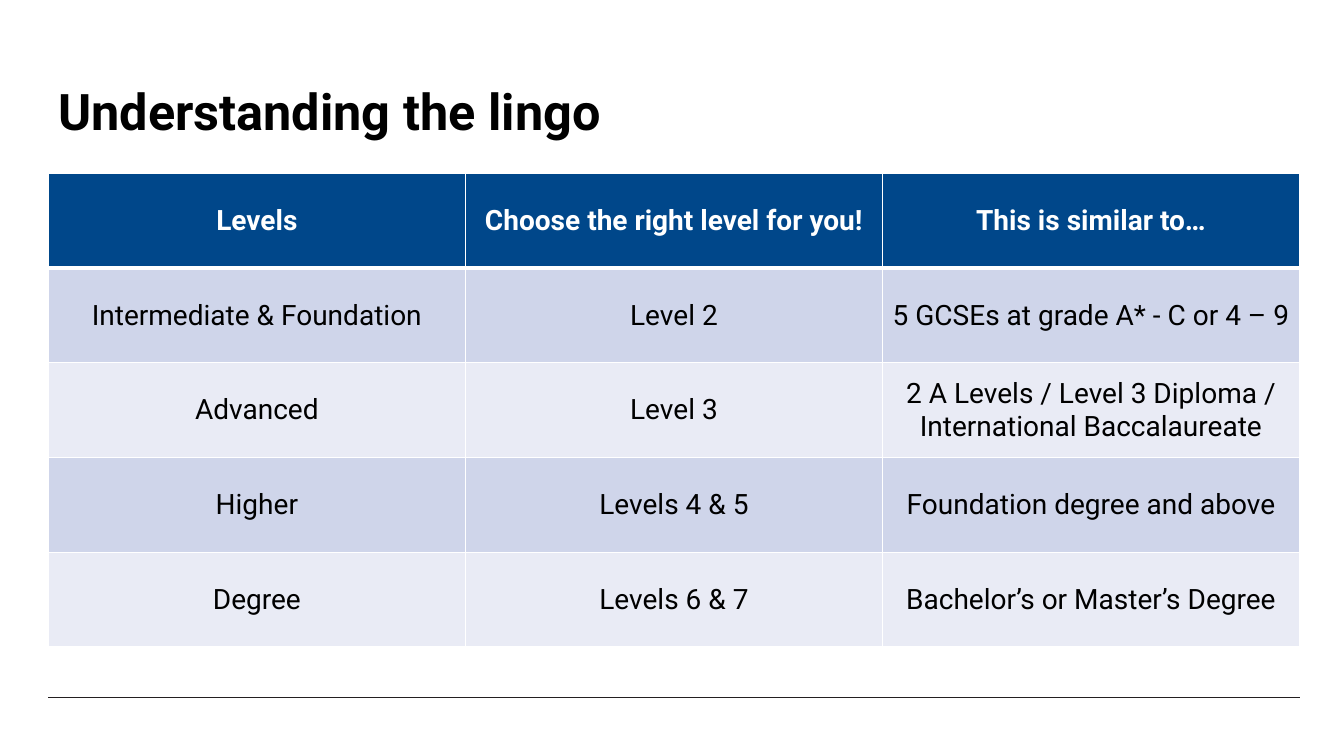
"""Build the slide that explains apprenticeship levels in a table."""
from lxml import etree
from pptx import Presentation
from pptx.dml.color import RGBColor
from pptx.enum.shapes import MSO_CONNECTOR as Connector
from pptx.enum.text import MSO_ANCHOR as Anchor, MSO_AUTO_SIZE as AutoSize, PP_ALIGN as Align
from pptx.oxml import parse_xml
from pptx.oxml.ns import nsdecls, qn
from pptx.util import Inches, Pt


def color(hex_string):
    return RGBColor.from_string(hex_string)


def format_text(paragraph, text_color, **values):
    for name, value in {"name": "Roboto", **values}.items():
        setattr(paragraph.font, name, value)
    paragraph.font.color.rgb = color(text_color)


LEFT, WIDTH = Inches(0.48), Inches(12.41)
TABLE_TOP, ROW_HEIGHT = Inches(1.72), Inches(0.94)
RULE_TOP = Inches(6.92)
HEADER_FILL, BAND_FILLS = "00478A", ("E9EBF5", "CFD5EA")
ROWS = [
    ("Levels", "Choose the right level for you!", "This is similar to…"),
    ("Intermediate & Foundation", "Level 2", "5 GCSEs at grade A* - C or 4 – 9"),
    ("Advanced", "Level 3", "2 A Levels / Level 3 Diploma / International Baccalaureate"),
    ("Higher", "Levels 4 & 5", "Foundation degree and above"),
    ("Degree", "Levels 6 & 7", "Bachelor’s or Master’s Degree"),
]

presentation = Presentation()
presentation.slide_width, presentation.slide_height = Inches(13.33), Inches(7.5)
slide = presentation.slides.add_slide(presentation.slide_layouts[5])

rule = slide.shapes.add_connector(Connector.STRAIGHT, LEFT, RULE_TOP, LEFT + WIDTH, RULE_TOP)
rule.line.color.rgb = color("231F20")
rule.line.width = Pt(0.5)
etree.SubElement(rule._element.spPr, qn("a:effectLst"))

title = slide.shapes.title
title.left, title.top, title.width, title.height = LEFT, Inches(0.4), WIDTH, Inches(1.05)
title.text_frame.text = "Understanding the lingo"
title.text_frame.auto_size = AutoSize.NONE
title.text_frame.vertical_anchor = Anchor.BOTTOM
heading = title.text_frame.paragraphs[0]
heading.alignment = Align.LEFT
heading.line_spacing = 0.9
format_text(heading, "000000", size=Pt(36), bold=True)

table = slide.shapes.add_table(
    len(ROWS), len(ROWS[0]), LEFT, TABLE_TOP, WIDTH, ROW_HEIGHT * len(ROWS)
).table
for row_index, texts in enumerate(ROWS):
    is_header = row_index == 0
    table.rows[row_index].height = ROW_HEIGHT
    for column_index, text in enumerate(texts):
        cell = table.cell(row_index, column_index)
        cell.text = text
        cell.vertical_anchor = Anchor.MIDDLE
        cell.fill.solid()
        cell.fill.fore_color.rgb = color(HEADER_FILL if is_header else BAND_FILLS[row_index % 2])
        paragraph = cell.text_frame.paragraphs[0]
        paragraph.alignment = Align.CENTER
        format_text(paragraph, "FFFFFF" if is_header else "000000", size=Pt(20), bold=is_header)
        border_widths = {
            "lnL": 1,
            "lnR": 1,
            "lnT": 3 if row_index == 1 else 1,
            "lnB": 3 if is_header else 1,
        }
        for position, (side, points) in enumerate(border_widths.items()):
            border = parse_xml(
                f'<a:{side} {nsdecls("a")} w="{Pt(points)}"><a:solidFill>'
                f'<a:srgbClr val="FFFFFF"/></a:solidFill></a:{side}>'
            )
            cell._tc.get_or_add_tcPr().insert(position, border)

presentation.save("out.pptx")
